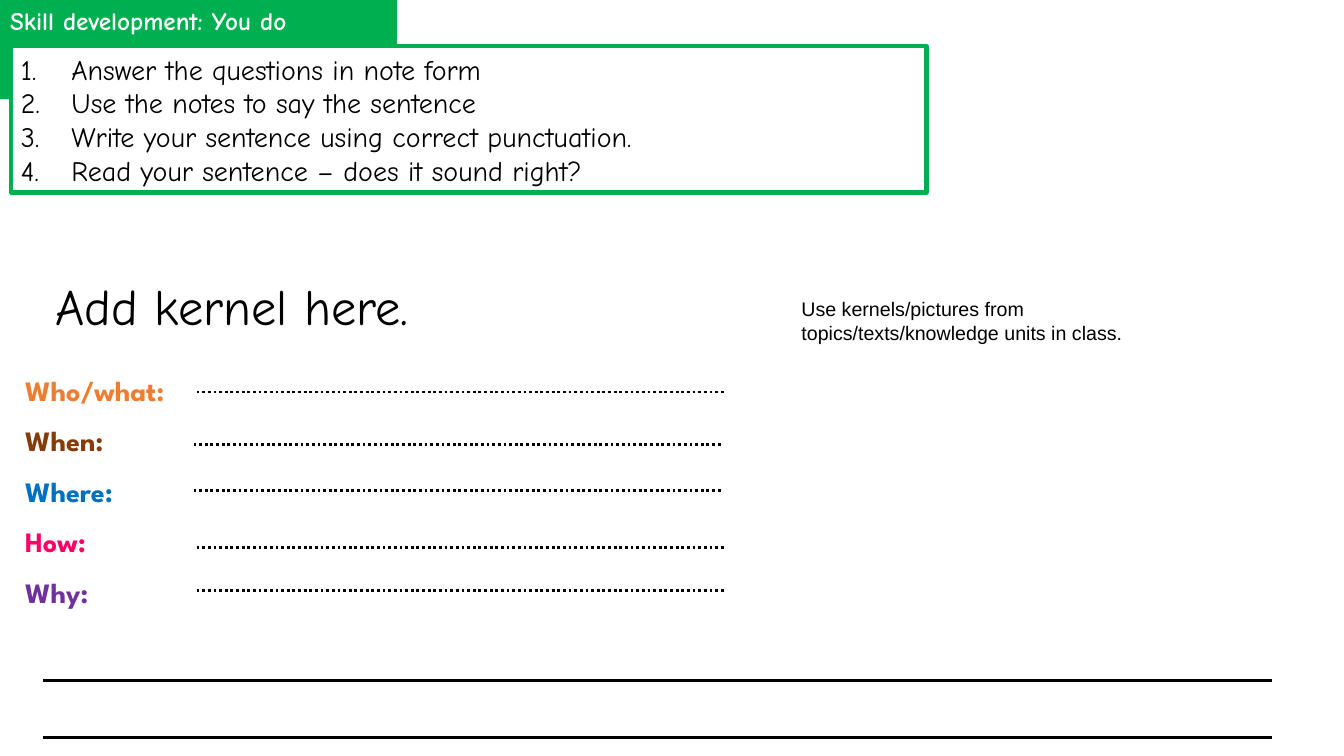
from dataclasses import dataclass

from lxml.etree import SubElement
from pptx import Presentation
from pptx.dml.color import RGBColor
from pptx.enum.dml import MSO_LINE as Dash
from pptx.enum.shapes import MSO_CONNECTOR as Link, MSO_SHAPE as Form
from pptx.enum.text import MSO_ANCHOR as Anchor, MSO_AUTO_SIZE as Fit, PP_ALIGN as Align
from pptx.oxml.ns import qn
from pptx.shapes.autoshape import Shape
from pptx.slide import Slide
from pptx.util import Inches, Pt


@dataclass(frozen=True)
class Theme:
    hand: str = "Comic Neue"
    bold: str = "League Spartan"
    plain: str = "Arial"
    black: str = "000000"
    white: str = "FFFFFF"
    green: str = "00B050"
    head: int = 18
    body: int = 20
    big: int = 36
    note: int = 14


@dataclass(frozen=True)
class Box:
    left: float
    top: float
    width: float
    height: float


@dataclass(frozen=True)
class Prompt:
    label: str
    color: str
    left: float
    top: float


@dataclass(frozen=True)
class Style:
    font: str
    size: int
    color: str
    bold: bool = False


THEME = Theme()
STEPS = [
    "Answer the questions in note form",
    "Use the notes to say the sentence",
    "Write your sentence using correct punctuation.",
    "Read your sentence – does it sound right?",
]
PROMPTS = [
    Prompt("Who/what:", "ED7D31", 1.95, 3.89),
    Prompt("When:", "843C0B", 1.92, 4.41),
    Prompt("Where:", "0070C0", 1.92, 4.87),
    Prompt("How:", "FF0066", 1.95, 5.43),
    Prompt("Why:", "7030A0", 1.95, 5.86),
]
DOTS = 5.24
RULES = [6.75, 7.32]


def rgb(code: str) -> RGBColor:
    return RGBColor.from_string(code)


def place(shape: Shape, box: Box) -> None:
    shape.left, shape.top = Inches(box.left), Inches(box.top)
    shape.width, shape.height = Inches(box.width), Inches(box.height)


def write(shape: Shape, lines: list[str], styles: list[Style]) -> None:
    frame = shape.text_frame
    frame.text = "\n".join(lines)
    frame.word_wrap = True
    frame.auto_size = Fit.SHAPE_TO_FIT_TEXT
    for para, style in zip(frame.paragraphs, styles):
        para.alignment = Align.LEFT
        for run in para.runs:
            font = run.font
            font.name, font.size, font.bold = style.font, Pt(style.size), style.bold
            font.color.rgb = rgb(style.color)


def add_text(slide: Slide, box: Box, lines: list[str], styles: list[Style]) -> Shape:
    shape = slide.shapes.add_textbox(0, 0, 0, 0)
    place(shape, box)
    write(shape, lines, styles)
    return shape


def add_line(slide: Slide, left: float, top: float, width: float,
             weight: float, dash: Dash | None = None) -> None:
    line = slide.shapes.add_connector(
        Link.STRAIGHT, Inches(left), Inches(top), Inches(left + width), Inches(top))
    line.line.color.rgb = rgb(THEME.black)
    line.line.width = Pt(weight)
    if dash:
        line.line.dash_style = dash
    SubElement(line._element.spPr, qn("a:effectLst"))


def add_title(slide: Slide) -> None:
    title = slide.shapes.title
    place(title, Box(0, 0, 3.94, 0.4))
    title.fill.solid()
    title.fill.fore_color.rgb = rgb(THEME.green)
    write(title, ["Skill development: You do"],
          [Style(THEME.hand, THEME.head, THEME.white, True)])
    title.text_frame.vertical_anchor = Anchor.MIDDLE


def add_steps(slide: Slide) -> None:
    panel = slide.shapes.add_shape(Form.RECTANGLE, 0, 0, 0, 0)
    place(panel, Box(0.11, 0.46, 9.08, 1.45))
    panel.shadow.inherit = False
    panel.fill.solid()
    panel.fill.fore_color.rgb = rgb(THEME.white)
    panel.line.color.rgb = rgb(THEME.green)
    panel.line.width = Pt(3)
    write(panel, STEPS, [Style(THEME.hand, THEME.body, THEME.black)] * len(STEPS))
    for para in panel.text_frame.paragraphs:
        props = para._p.get_or_add_pPr()
        props.set("marL", str(Inches(0.5)))
        props.set("indent", str(Inches(-0.5)))
        tint = SubElement(props, qn("a:buClr"))
        SubElement(tint, qn("a:srgbClr"), val=THEME.black)
        SubElement(props, qn("a:buFont"), typeface=THEME.hand)
        SubElement(props, qn("a:buAutoNum"), type="arabicPeriod")


def add_prompts(slide: Slide) -> None:
    labels = add_text(
        slide, Box(0.15, 3.49, 1.8, 2.63), [item.label for item in PROMPTS],
        [Style(THEME.bold, THEME.body, item.color, True) for item in PROMPTS])
    for para in labels.text_frame.paragraphs:
        para.line_spacing = 1.5
    for item in PROMPTS:
        add_line(slide, item.left, item.top, DOTS, 2, Dash.ROUND_DOT)


def main() -> None:
    deck = Presentation()
    deck.slide_width, deck.slide_height = Inches(13.33), Inches(7.5)
    slide = deck.slides.add_slide(deck.slide_layouts[5])

    # Heading and instructions
    add_title(slide)
    add_steps(slide)

    # Writing rules
    for top in RULES:
        add_line(slide, 0.43, top, 12.19, 2.25)

    # Kernel and teacher note
    add_text(slide, Box(0.45, 2.68, 6.2, 0.71), ["Add kernel here."],
             [Style(THEME.hand, THEME.big, THEME.black)])
    add_text(slide, Box(7.85, 2.9, 3.98, 0.57),
             ["Use kernels/pictures from topics/texts/knowledge units in class."],
             [Style(THEME.plain, THEME.note, THEME.black)])

    # Question prompts
    add_prompts(slide)
    deck.save("out.pptx")


if __name__ == "__main__":
    main()
